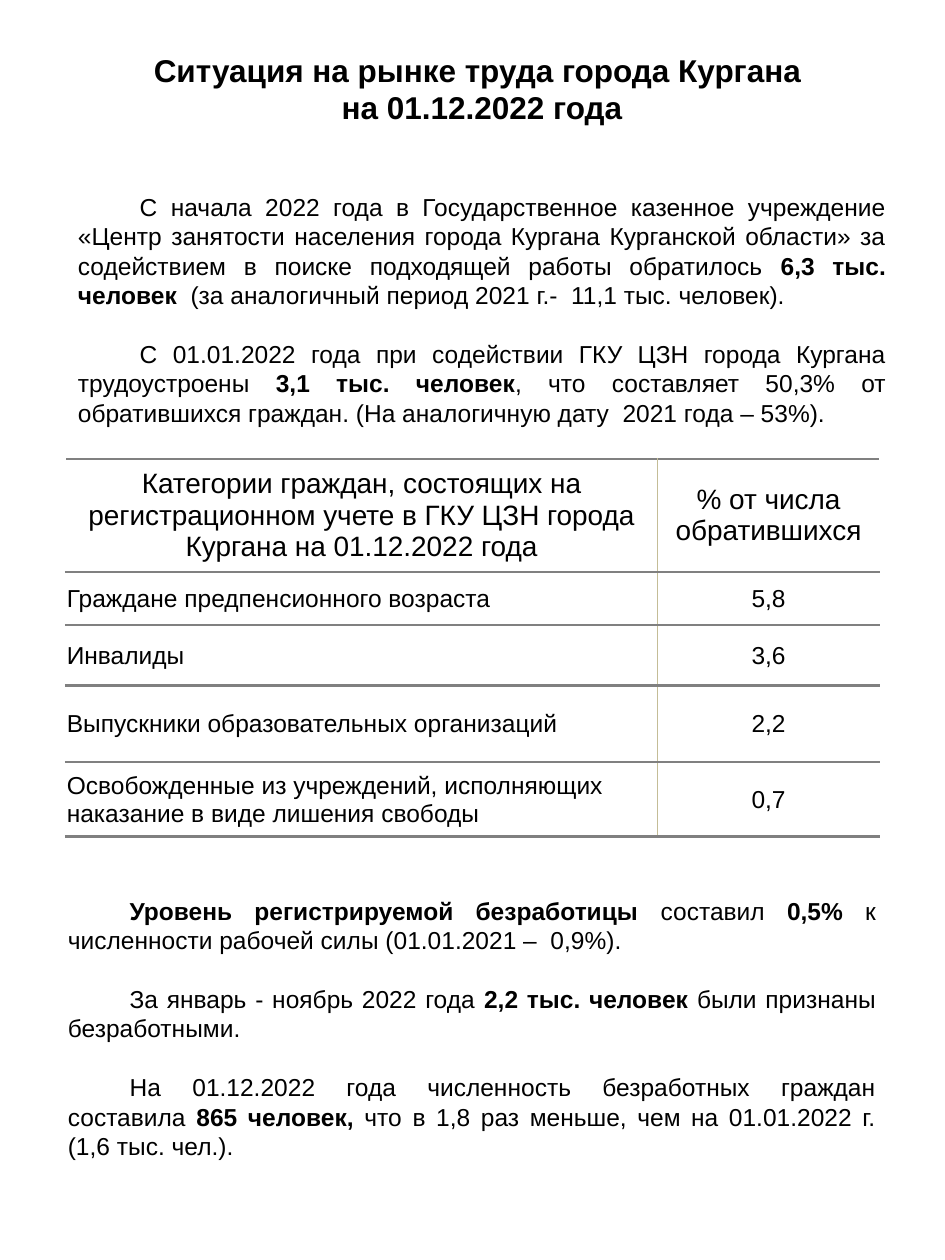
from pptx import Presentation
from pptx.dml.color import RGBColor
from pptx.enum.text import MSO_ANCHOR, MSO_AUTO_SIZE, PP_ALIGN
from pptx.oxml.ns import qn
from pptx.util import Inches, Pt
from lxml.etree import SubElement

BLACK = RGBColor(0x00, 0x00, 0x00)
RULE_GRAY = RGBColor(0x80, 0x80, 0x80)
DIVIDER_TAN = RGBColor(0xC4, 0xBD, 0x97)

# Each paragraph is a list of (text, bold) runs
APPLICANTS = [
    [("С начала 2022 года в Государственное казенное учреждение «Центр занятости населения "
      "города Кургана Курганской области» за содействием в поиске подходящей работы "
      "обратилось ", False),
     ("6,3 тыс. человек  ", True),
     ("(за аналогичный период 2021 г.-  11,1 тыс. человек).", False)],
    [("С 01.01.2022 года при содействии ГКУ ЦЗН города Кургана трудоустроены ", False),
     ("3,1 тыс. человек", True),
     (", что составляет 50,3% от обратившихся граждан. "
      "(На аналогичную дату  2021 года – 53%).", False)],
]
UNEMPLOYMENT = [
    [("Уровень регистрируемой безработицы ", True),
     ("составил ", False),
     ("0,5% ", True),
     ("к численности рабочей силы (01.01.2021 –  0,9%).", False)],
    [("За январь - ноябрь 2022 года ", False),
     ("2,2 тыс. человек ", True),
     ("были признаны безработными.", False)],
    [("На 01.12.2022 года численность безработных граждан составила ", False),
     ("865 человек,", True),
     (" что в 1,8 раз меньше, чем на 01.01.2022 г. (1,6 тыс. чел.).", False)],
]
CATEGORIES = [
    ("Категории граждан, состоящих на регистрационном учете в ГКУ ЦЗН города Кургана "
     "на 01.12.2022 года", "% от числа обратившихся"),
    ("Граждане предпенсионного возраста", "5,8"),
    ("Инвалиды", "3,6"),
    ("Выпускники образовательных организаций", "2,2"),
    ("Освобожденные из учреждений, исполняющих наказание в виде лишения свободы", "0,7"),
]
COLUMN_WIDTHS = [4.7, 1.76]
ROW_HEIGHTS = [0.9, 0.42, 0.48, 0.61, 0.59]


def add_text(paragraph, text, size=14, bold=False, color=BLACK, font="Arial"):
    """Append text to a paragraph; a newline becomes a line break."""
    for index, line in enumerate(text.split("\n")):
        if index:
            paragraph.add_line_break()
        run = paragraph.add_run()
        run.text = line
        run.font.name = font
        run.font.size = Pt(size)
        run.font.bold = bold
        run.font.color.rgb = color


def add_border(cell, side, color, width):
    line = SubElement(cell._tc.get_or_add_tcPr(), qn(f"a:{side}"), w=str(Pt(width)))
    fill = SubElement(line, qn("a:solidFill"))
    SubElement(fill, qn("a:srgbClr"), val=str(color))


class ReportSlide:
    line_height = Pt(16.8)
    first_indent = Inches(0.49)

    def __init__(self, presentation):
        self.slide = presentation.slides.add_slide(presentation.slide_layouts[5])

    def title(self, text, left, top, width, height):
        shape = self.slide.shapes.title
        shape.left, shape.top = Inches(left), Inches(top)
        shape.width, shape.height = Inches(width), Inches(height)
        frame = shape.text_frame
        frame.word_wrap = True
        frame.auto_size = MSO_AUTO_SIZE.NONE
        frame.vertical_anchor = MSO_ANCHOR.MIDDLE
        paragraph = frame.paragraphs[0]
        paragraph.alignment = PP_ALIGN.CENTER
        paragraph.space_before = Pt(0)
        paragraph.line_spacing = Pt(21.1)
        add_text(paragraph, text, size=18, bold=True)

    def body(self, paragraphs, left, top, width, height):
        box = self.slide.shapes.add_textbox(
            Inches(left), Inches(top), Inches(width), Inches(height))
        frame = box.text_frame
        frame.word_wrap = True
        frame.auto_size = MSO_AUTO_SIZE.SHAPE_TO_FIT_TEXT
        frame.vertical_anchor = MSO_ANCHOR.MIDDLE
        for index, runs in enumerate(paragraphs):
            paragraph = frame.add_paragraph() if index else frame.paragraphs[0]
            paragraph.alignment = PP_ALIGN.JUSTIFY
            paragraph.line_spacing = self.line_height
            paragraph.space_before = self.line_height if index else Pt(0)
            paragraph._p.get_or_add_pPr().set("indent", str(self.first_indent))
            for text, bold in runs:
                add_text(paragraph, text, bold=bold)

    def table(self, rows, left, top):
        table = self.slide.shapes.add_table(
            len(rows), len(COLUMN_WIDTHS), Inches(left), Inches(top),
            Inches(sum(COLUMN_WIDTHS)), Inches(sum(ROW_HEIGHTS))).table
        table.first_row = table.horz_banding = False
        for column, width in zip(table.columns, COLUMN_WIDTHS):
            column.width = Inches(width)
        for row, height in zip(table.rows, ROW_HEIGHTS):
            row.height = Inches(height)
        for row_index, row in enumerate(rows):
            for column_index, text in enumerate(row):
                self.cell(table.cell(row_index, column_index), text,
                          header=row_index == 0, label=column_index == 0)

    def cell(self, cell, text, header, label):
        cell.vertical_anchor = MSO_ANCHOR.MIDDLE
        if not header:
            cell.margin_left = cell.margin_right = cell.margin_top = Inches(0.01)
            cell.margin_bottom = 0
        add_border(cell, "lnR" if label else "lnL", DIVIDER_TAN, 1)
        add_border(cell, "lnT", RULE_GRAY, 1.5)
        add_border(cell, "lnB", RULE_GRAY, 1.5)
        cell.fill.background()
        paragraph = cell.text_frame.paragraphs[0]
        paragraph.alignment = PP_ALIGN.LEFT if label and not header else PP_ALIGN.CENTER
        add_text(paragraph, text, size=16 if header else 14)


def main():
    presentation = Presentation()
    presentation.slide_width = Inches(7.5)
    presentation.slide_height = Inches(10)
    report = ReportSlide(presentation)

    # Heading
    report.title("Ситуация на рынке труда города Кургана \nна 01.12.2022 года",
                 0.52, 0.35, 6.61, 0.71)
    # Applicants and placements
    report.body(APPLICANTS, 0.52, 1.46, 6.61, 1.99)
    # Unemployment figures
    report.body(UNEMPLOYMENT, 0.44, 7.05, 6.61, 2.22)
    # Registered categories
    report.table(CATEGORIES, 0.52, 3.64)

    presentation.save("out.pptx")


if __name__ == "__main__":
    main()
